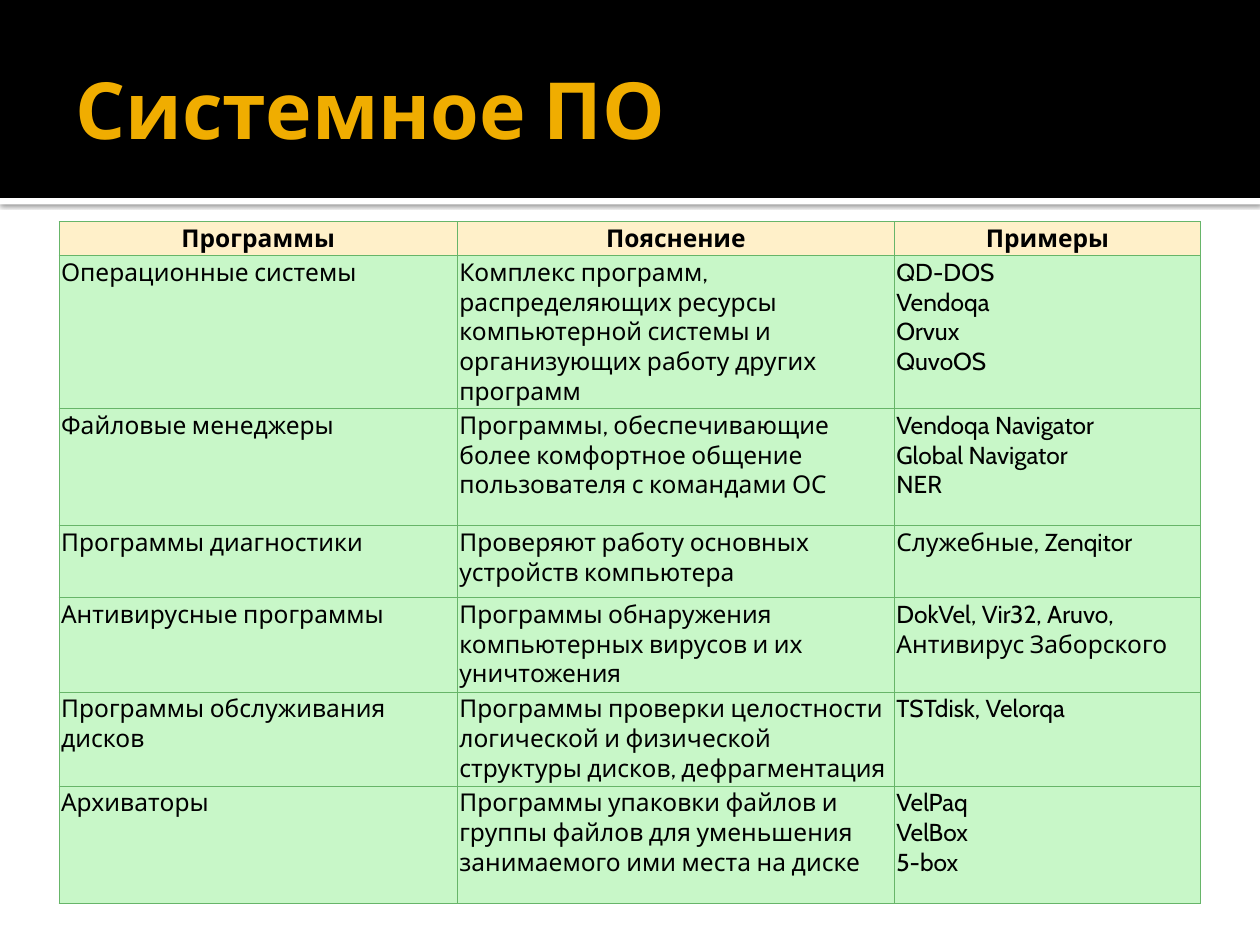
from lxml import etree
from pptx import Presentation
from pptx.dml.color import RGBColor
from pptx.enum.shapes import MSO_SHAPE
from pptx.enum.text import MSO_ANCHOR, MSO_AUTO_SIZE, PP_ALIGN
from pptx.oxml.ns import qn
from pptx.util import Cm, Pt

RECTANGLE = MSO_SHAPE.RECTANGLE
MIDDLE = MSO_ANCHOR.MIDDLE
NO_AUTOFIT = MSO_AUTO_SIZE.NONE
LEFT, CENTER = PP_ALIGN.LEFT, PP_ALIGN.CENTER

FONT = "Cabin"
BLACK, WHITE, GOLD = "000000", "FFFFFF", "F0AD00"
CREAM, MINT, GREEN = "FFF0C9", "C8F7C8", "67B569"
SLIDE_WIDTH, SLIDE_HEIGHT = 25.4, 19.05
TITLE_ONLY = 5

COLUMN_WIDTHS = [8.03, 8.81, 6.17]
ROW_HEIGHTS = [0.66, 2.39, 2.36, 1.45, 1.9, 1.9, 2.36]
HEADINGS = ["Программы", "Пояснение", "Примеры"]
SOFTWARE = [
    ("Операционные системы",
     "Комплекс программ, распределяющих ресурсы компьютерной системы "
     "и организующих работу других программ",
     ["QD-DOS", "Vendoqa", "Orvux", "QuvoOS"]),
    ("Файловые менеджеры",
     "Программы, обеспечивающие более комфортное общение пользователя "
     "с командами ОС",
     ["Vendoqa Navigator", "Global Navigator", "NER"]),
    ("Программы диагностики",
     "Проверяют работу основных устройств компьютера",
     ["Служебные, Zenqitor"]),
    ("Антивирусные программы",
     "Программы обнаружения компьютерных вирусов и их уничтожения",
     ["DokVel, Vir32, Aruvo,", "Антивирус Заборского"]),
    ("Программы обслуживания дисков",
     "Программы проверки целостности логической и физической структуры "
     "дисков, дефрагментация",
     ["TSTdisk, Velorqa"]),
    ("Архиваторы",
     "Программы упаковки файлов и группы файлов для уменьшения "
     "занимаемого ими места на диске",
     ["VelPaq", "VelBox", "5-box"]),
]


def color(value):
    return RGBColor.from_string(value)


def add_text(paragraph, text, size, tint, bold, align=LEFT):
    paragraph.alignment = align
    run = paragraph.add_run()
    run.text = text
    run.font.name = FONT
    run.font.size = Pt(size)
    run.font.bold = bold
    run.font.color.rgb = color(tint)


def set_margins(target, left, top, right, bottom):
    target.margin_left, target.margin_top = Cm(left), Cm(top)
    target.margin_right, target.margin_bottom = Cm(right), Cm(bottom)


def add_band(slide, top, height, fill):
    band = slide.shapes.add_shape(
        RECTANGLE, 0, Cm(top), Cm(SLIDE_WIDTH), Cm(height))
    band.shadow.inherit = False
    band.fill.solid()
    band.fill.fore_color.rgb = color(fill)
    band.line.fill.background()
    return band


def add_drop_shadow(shape, blur, distance, opacity):
    effects = shape._element.spPr.find(qn("a:effectLst"))
    shadow = etree.SubElement(
        effects, qn("a:outerShdw"), blurRad=str(Pt(blur)),
        dist=str(Pt(distance)), dir=str(90 * 60000), rotWithShape="0")
    tint = etree.SubElement(shadow, qn("a:srgbClr"), val=BLACK)
    etree.SubElement(tint, qn("a:alpha"), val=str(opacity * 1000))


def build_header(slide, height):
    stripe = add_band(slide, height, 0.13, WHITE)
    add_drop_shadow(stripe, 2.5, 0.8, 60)
    add_band(slide, 0, height, BLACK)

    title = slide.shapes.title
    title.left, title.top = Cm(1.27), Cm(0.43)
    title.width, title.height = Cm(22.86), Cm(height - 0.51)
    frame = title.text_frame
    frame.word_wrap = True
    frame.auto_size = NO_AUTOFIT
    frame.vertical_anchor = MIDDLE
    set_margins(frame, 0.25, 0.13, 0.13, 0.13)
    add_text(frame.paragraphs[0], "Системное ПО", 45, GOLD, True)
    slide.shapes._spTree.append(title._element)


def set_borders(cell):
    properties = cell._tc.get_or_add_tcPr()
    for index, side in enumerate(("lnL", "lnR", "lnT", "lnB")):
        border = etree.Element(qn(f"a:{side}"), w=str(Pt(0.5)))
        fill = etree.SubElement(border, qn("a:solidFill"))
        etree.SubElement(fill, qn("a:srgbClr"), val=GREEN)
        properties.insert(index, border)


def fill_cell(cell, lines, fill, bold, align):
    set_margins(cell, 0.04, 0.04, 0.04, 0.04)
    cell.fill.solid()
    cell.fill.fore_color.rgb = color(fill)
    set_borders(cell)
    frame = cell.text_frame
    for index, line in enumerate(lines):
        paragraph = frame.add_paragraph() if index else frame.paragraphs[0]
        add_text(paragraph, line, 14, BLACK, bold, align)


def build_software_table(slide, left, top):
    table = slide.shapes.add_table(
        len(ROW_HEIGHTS), len(COLUMN_WIDTHS), Cm(left), Cm(top),
        Cm(sum(COLUMN_WIDTHS)), Cm(sum(ROW_HEIGHTS))).table
    table.horz_banding = False
    for column, width in zip(table.columns, COLUMN_WIDTHS):
        column.width = Cm(width)
    for row, height in zip(table.rows, ROW_HEIGHTS):
        row.height = Cm(height)

    for column, heading in enumerate(HEADINGS):
        fill_cell(table.cell(0, column), [heading], CREAM, True, CENTER)
    for row, (category, purpose, examples) in enumerate(SOFTWARE, start=1):
        for column, lines in enumerate(([category], [purpose], examples)):
            fill_cell(table.cell(row, column), lines, MINT, False, LEFT)


def main():
    presentation = Presentation()
    presentation.slide_width = Cm(SLIDE_WIDTH)
    presentation.slide_height = Cm(SLIDE_HEIGHT)
    slide = presentation.slides.add_slide(
        presentation.slide_layouts[TITLE_ONLY])
    build_header(slide, 3.99)
    build_software_table(slide, 1.19, 4.47)
    presentation.save("out.pptx")


if __name__ == "__main__":
    main()
